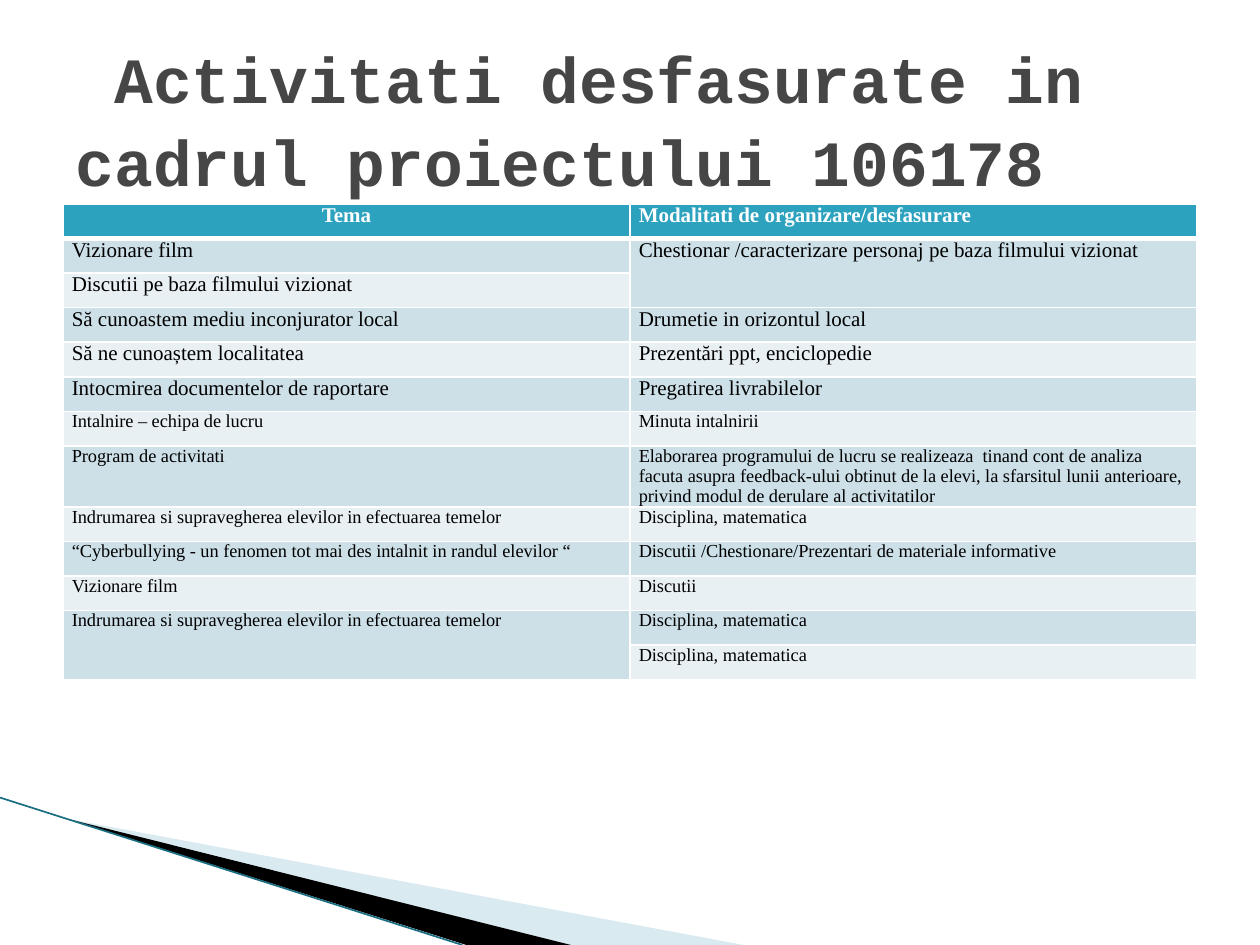
from dataclasses import dataclass

from pptx import Presentation
from pptx.dml.color import RGBColor as Rgb
from pptx.enum.shapes import MSO_CONNECTOR as Conn
from pptx.enum.text import MSO_ANCHOR as Anchor, PP_ALIGN as Align
from pptx.oxml.ns import qn
from pptx.util import Inches, Pt
from lxml.etree import SubElement as Sub


@dataclass(frozen=True)
class Theme:
    title: str = "464646"
    head: str = "2DA2BF"
    bands: tuple = ("CDE0E8", "E8F0F4")
    ink: str = "000000"
    white: str = "FFFFFF"
    pale: str = "A0CBDC"
    edge: str = "1A6E82"
    mono: str = "Courier New"
    serif: str = "Times New Roman"
    title_size: float = 36.9
    large: float = 12
    small: float = 10.5


LOOK = Theme()
TITLE = " Activitati desfasurate in cadrul proiectului 106178"
TASK = "Indrumarea si supravegherea elevilor in efectuarea temelor"
MATH = "Disciplina, matematica"
# None marks a cell merged with the one above it
ROWS = [
    ("Tema", "Modalitati de organizare/desfasurare"),
    ("Vizionare film", "Chestionar /caracterizare personaj pe baza filmului vizionat"),
    ("Discutii pe baza filmului vizionat", None),
    ("Să cunoastem mediu inconjurator local", "Drumetie in orizontul local"),
    ("Să ne cunoaștem localitatea", "Prezentări ppt, enciclopedie"),
    ("Intocmirea documentelor de raportare", "Pregatirea livrabilelor"),
    ("Intalnire – echipa de lucru", "Minuta intalnirii"),
    ("Program de activitati",
     "Elaborarea programului de lucru se realizeaza  tinand cont de analiza "
     "facuta asupra feedback-ului obtinut de la elevi, la sfarsitul lunii "
     "anterioare, privind modul de derulare al activitatilor"),
    (TASK, MATH),
    ("“Cyberbullying - un fenomen tot mai des intalnit in randul elevilor “",
     "Discutii /Chestionare/Prezentari de materiale informative"),
    ("Vizionare film", "Discutii"),
    (TASK, MATH),
    (None, MATH),
]
TALL = 7         # row with the long text
FIRST_SMALL = 6  # rows from here on use the small size


def style(font, name, size, color, bold=False):
    font.name, font.size, font.bold = name, Pt(size), bold
    font.color.rgb = Rgb.from_string(color)


def add_title(slide, x, y, w, h):
    box = slide.shapes.title
    box.left, box.top, box.width, box.height = x, y, w, h
    frame = box.text_frame
    frame.text = TITLE
    frame.word_wrap = True
    frame.vertical_anchor = Anchor.MIDDLE
    para = frame.paragraphs[0]
    para.alignment = Align.LEFT
    para.line_spacing = 1.07
    style(para.runs[0].font, LOOK.mono, LOOK.title_size, LOOK.title, True)


def add_edges(cell, row):
    props = cell._tc.get_or_add_tcPr()
    for side in "LRTB":
        thick = (row, side) in ((0, "B"), (1, "T"))
        line = Sub(props, qn(f"a:ln{side}"), w=str(Pt(3 if thick else 1)))
        Sub(Sub(line, qn("a:solidFill")), qn("a:srgbClr"), val=LOOK.white)


def fill_cell(cell, text, row, col):
    add_edges(cell, row)
    cell.fill.solid()
    color = LOOK.bands[(row - 1) % 2] if row else LOOK.head
    cell.fill.fore_color.rgb = Rgb.from_string(color)
    cell.margin_left = cell.margin_right = Inches(0.07)
    cell.margin_top = cell.margin_bottom = 0
    if text is None:
        return
    cell.text_frame.text = text
    para = cell.text_frame.paragraphs[0]
    size = LOOK.small if row >= FIRST_SMALL else LOOK.large
    style(para.runs[0].font, LOOK.serif, size,
          LOOK.ink if row else LOOK.white, row == 0)
    if row == 0:
        para.alignment = (Align.CENTER, Align.JUSTIFY)[col]


def add_grid(slide, x, y, w, h):
    table = slide.shapes.add_table(len(ROWS), 2, x, y, w, h).table
    tall = Inches(0.41)
    for row, texts in enumerate(ROWS):
        table.rows[row].height = tall if row == TALL else (h - tall) // (len(ROWS) - 1)
        for col, text in enumerate(texts):
            fill_cell(table.cell(row, col), text, row, col)
            if text is None:
                table.cell(row - 1, col).merge(table.cell(row, col))


def add_wedge(slide, points, color, alpha=None):
    start, *rest = points
    build = slide.shapes.build_freeform(*start, scale=1)
    build.add_line_segments(rest, close=True)
    shape = build.convert_to_shape()
    shape.shadow.inherit = False
    shape.line.fill.background()
    shape.fill.solid()
    shape.fill.fore_color.rgb = Rgb.from_string(color)
    if alpha:
        tint = shape._element.spPr.find(qn("a:solidFill"))[0]
        Sub(tint, qn("a:alpha"), val=str(alpha * 1000))


def add_corner(slide, x, y, w, h):
    base = y + h
    tip = (x + Inches(0.54), y + Inches(0.17))
    mid = (x + Inches(4.53), base)
    # Pale and dark wedges share a tip and a foot
    add_wedge(slide, [tip, (x + w, base), mid], LOOK.pale, 40)
    add_wedge(slide, [tip, mid, (x + Inches(3.7), base)], LOOK.ink)
    # Thin edge along the dark wedge
    edge = slide.shapes.add_connector(Conn.STRAIGHT, x, y, x + Inches(3.67), base)
    edge.line.color.rgb = Rgb.from_string(LOOK.edge)
    edge.line.width = Pt(0.95)
    Sub(edge._element.spPr, qn("a:effectLst"))


def main():
    deck = Presentation()
    deck.slide_width, deck.slide_height = Inches(10), Inches(7.5)
    slide = deck.slides.add_slide(deck.slide_layouts[5])
    add_corner(slide, 0, Inches(6.33), Inches(5.9), Inches(1.17))
    add_grid(slide, Inches(0.5), Inches(1.62), Inches(9), Inches(3.7))
    add_title(slide, Inches(0.5), Inches(0.3), Inches(9), Inches(1.25))
    deck.save("out.pptx")


if __name__ == "__main__":
    main()
